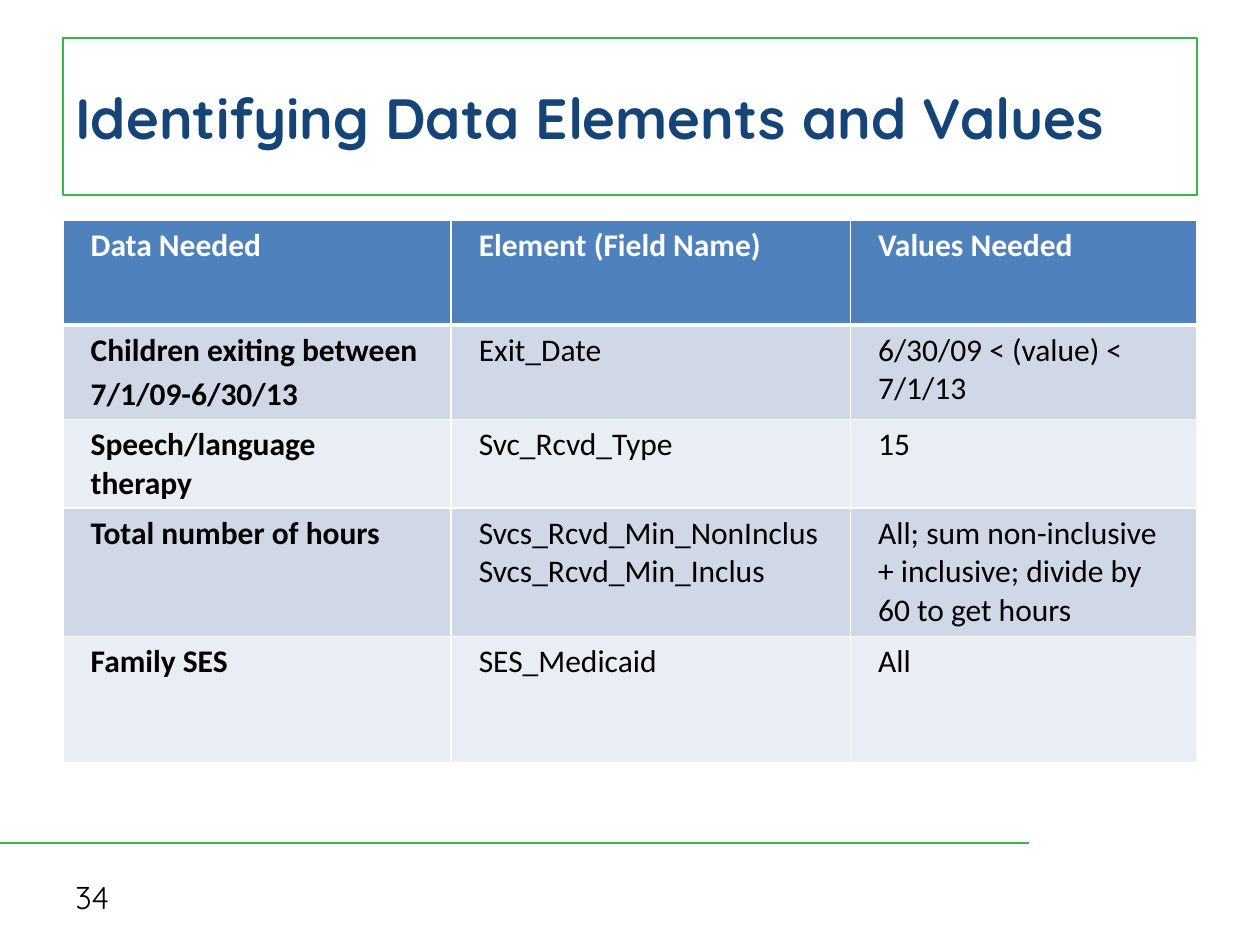
from pptx import Presentation
from pptx.dml.color import RGBColor
from pptx.enum.shapes import MSO_CONNECTOR, MSO_SHAPE
from pptx.enum.text import MSO_ANCHOR, PP_ALIGN
from pptx.oxml import parse_xml
from pptx.oxml.ns import nsdecls
from pptx.util import Inches, Pt

GREEN = "39B54A"
WHITE = "FFFFFF"
BLUE = "4F81BD"
BANDS = ("D0D8E8", "E9EDF4")
COLS = (3.08, 3.17, 2.75)
ROWS = (
    (0.83, "Data Needed", "Element (Field Name)", "Values Needed"),
    (0.75, "Children exiting between\n7/1/09-6/30/13", "Exit_Date",
     "6/30/09 < (value) < 7/1/13"),
    (0.58, "Speech/language therapy", "Svc_Rcvd_Type", "15"),
    (1.02, "Total number of hours",
     "Svcs_Rcvd_Min_NonInclus\nSvcs_Rcvd_Min_Inclus",
     "All; sum non-inclusive + inclusive; divide by 60 to get hours"),
    (1, "Family SES", "SES_Medicaid", "All"),
)


def color(code):
    return RGBColor.from_string(code)


def write(frame, text, font="Calibri", size=18, fill="000000", bold=False, gap=0):
    frame.word_wrap = True
    for index, line in enumerate(text.split("\n")):
        para = frame.paragraphs[0] if index == 0 else frame.add_paragraph()
        para.alignment = PP_ALIGN.LEFT
        if index:
            para.space_before = Pt(gap)
        run = para.add_run()
        run.text = line
        run.font.name = font
        run.font.size = Pt(size)
        run.font.bold = bold
        run.font.color.rgb = color(fill)


def add_title(slide, text):
    box = slide.shapes.add_shape(
        MSO_SHAPE.RECTANGLE, Inches(0.5), Inches(0.3), Inches(9), Inches(1.25))
    box.shadow.inherit = False
    box.fill.background()
    box.line.color.rgb = color(GREEN)
    box.line.width = Pt(1)
    box.text_frame.vertical_anchor = MSO_ANCHOR.MIDDLE
    write(box.text_frame, text, font="Quicksand", size=32.4,
          fill="154578", bold=True)


def add_edges(cell, top=1, bottom=1):
    props = cell._tc.get_or_add_tcPr()
    for side, width in (("L", 1), ("R", 1), ("T", top), ("B", bottom)):
        props.append(parse_xml(
            f'<a:ln{side} {nsdecls("a")} w="{Pt(width)}"><a:solidFill>'
            f'<a:srgbClr val="{WHITE}"/></a:solidFill></a:ln{side}>'))


def add_grid(slide):
    height = sum(row[0] for row in ROWS)
    table = slide.shapes.add_table(
        len(ROWS), len(COLS), Inches(0.5), Inches(1.75),
        Inches(sum(COLS)), Inches(height)).table
    for col, width in zip(table.columns, COLS):
        col.width = Inches(width)
    for r, (tall, *texts) in enumerate(ROWS):
        table.rows[r].height = Inches(tall)
        head = r == 0
        for c, text in enumerate(texts):
            cell = table.cell(r, c)
            cell.margin_left = cell.margin_right = Inches(0.22)
            cell.margin_top = cell.margin_bottom = Inches(0.05)
            add_edges(cell, top=3 if r == 1 else 1, bottom=3 if head else 1)
            cell.fill.solid()
            cell.fill.fore_color.rgb = color(BLUE if head else BANDS[(r - 1) % 2])
            write(cell.text_frame, text, fill=WHITE if head else "000000",
                  bold=head or c == 0, gap=3 if c == 0 else 0)


def add_rule(slide):
    rule = slide.shapes.add_connector(
        MSO_CONNECTOR.STRAIGHT, 0, Inches(6.69), Inches(8.17), Inches(6.69))
    rule.line.color.rgb = color(GREEN)
    rule.line.width = Pt(1.5)
    rule._element.spPr.append(parse_xml(f'<a:effectLst {nsdecls("a")}/>'))


def add_number(slide, text):
    box = slide.shapes.add_textbox(
        Inches(0.5), Inches(6.92), Inches(2.33), Inches(0.4))
    box.text_frame.vertical_anchor = MSO_ANCHOR.MIDDLE
    write(box.text_frame, text, font="Quicksand")


def main():
    deck = Presentation()
    deck.slide_width = Inches(10)
    deck.slide_height = Inches(7.5)
    slide = deck.slides.add_slide(deck.slide_layouts[6])
    add_rule(slide)
    add_number(slide, "34")
    add_title(slide, "Identifying Data Elements and Values")
    add_grid(slide)
    deck.save("out.pptx")


if __name__ == "__main__":
    main()
